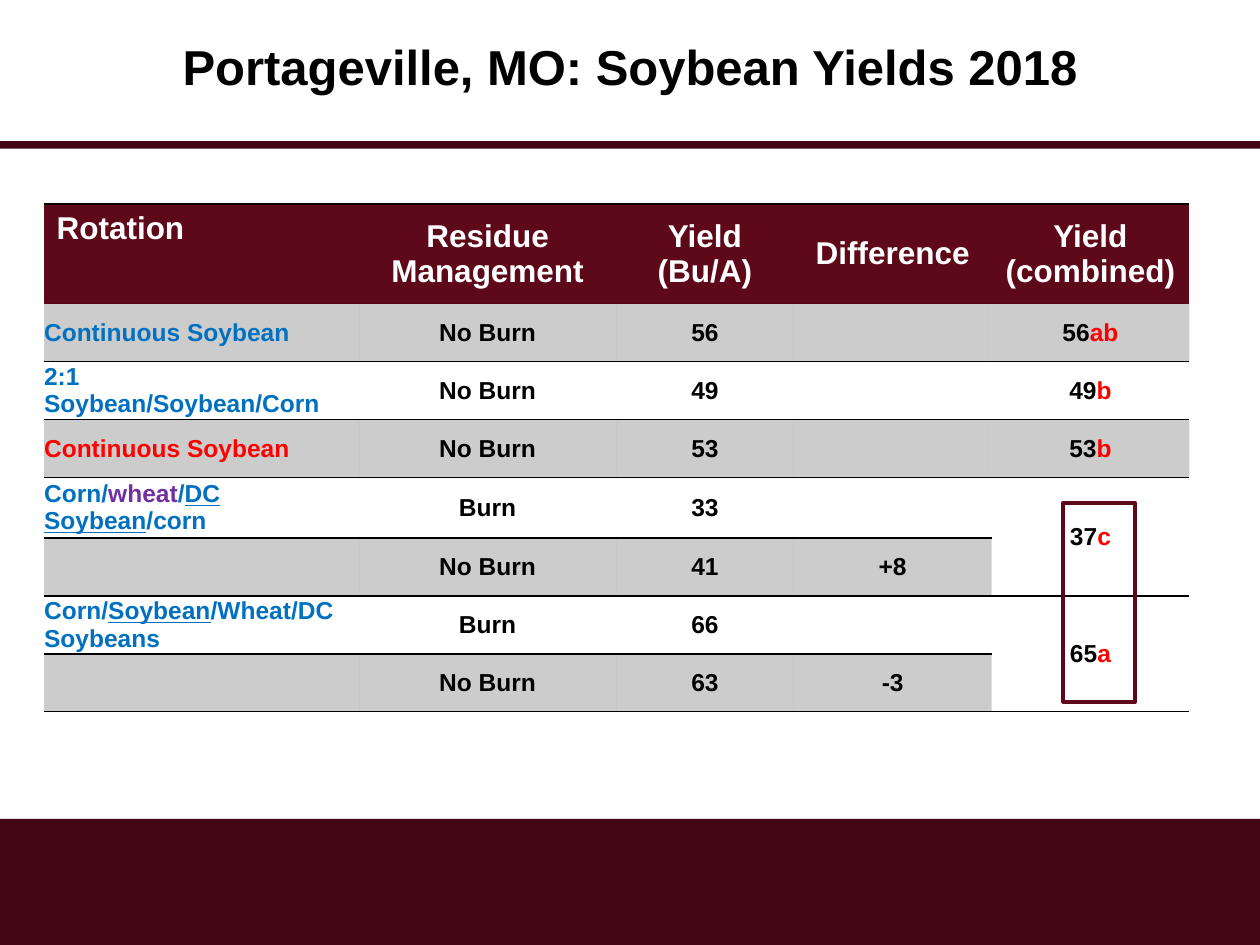
from dataclasses import dataclass

from lxml import etree
from pptx import Presentation
from pptx.dml.color import RGBColor
from pptx.enum.shapes import MSO_SHAPE
from pptx.enum.text import MSO_ANCHOR, MSO_AUTO_SIZE, PP_ALIGN
from pptx.oxml.ns import qn
from pptx.util import Inches, Pt

RECTANGLE = MSO_SHAPE.RECTANGLE
TOP, MIDDLE = MSO_ANCHOR.TOP, MSO_ANCHOR.MIDDLE
LEFT, CENTER = PP_ALIGN.LEFT, PP_ALIGN.CENTER
NO_AUTOFIT = MSO_AUTO_SIZE.NONE
TITLE_ONLY = 5


@dataclass(frozen=True)
class Theme:
    font: str = "Arial"
    title_size: int = 28
    header_size: int = 18
    body_size: int = 14
    black: str = "000000"
    white: str = "FFFFFF"
    band: str = "410611"
    maroon: str = "5E091A"
    blue: str = "0070C0"
    purple: str = "7030A0"
    red: str = "FF0000"
    shade_alpha: int = 20


THEME = Theme()


class SlideBuilder:
    def __init__(self, presentation, theme):
        self.theme = theme
        self.slide = presentation.slides.add_slide(presentation.slide_layouts[TITLE_ONLY])

    def style_run(self, run, size, color, underline=False):
        font = run.font
        font.name, font.size, font.bold = self.theme.font, Pt(size), True
        font.color.rgb = RGBColor.from_string(color)
        if underline:
            font.underline = True

    def title(self, text, left, top, width, height):
        shape = self.slide.shapes.title
        shape.left, shape.top = Inches(left), Inches(top)
        shape.width, shape.height = Inches(width), Inches(height)
        text_frame = shape.text_frame
        text_frame.text = text
        text_frame.auto_size = NO_AUTOFIT
        text_frame.vertical_anchor = MIDDLE
        paragraph = text_frame.paragraphs[0]
        paragraph.alignment, paragraph.line_spacing = CENTER, 0.9
        self.style_run(paragraph.runs[0], self.theme.title_size, self.theme.black)

    def rectangle(self, left, top, width, height, fill=None, line=None):
        shape = self.slide.shapes.add_shape(
            RECTANGLE, Inches(left), Inches(top), Inches(width), Inches(height))
        shape.shadow.inherit = False
        if fill:
            shape.fill.solid()
            shape.fill.fore_color.rgb = RGBColor.from_string(fill)
        else:
            shape.fill.background()
        if line:
            shape.line.color.rgb = RGBColor.from_string(line)
            shape.line.width = Pt(2.25)
        else:
            shape.line.fill.background()

    def table(self, left, top, widths, heights):
        frame = self.slide.shapes.add_table(
            len(heights), len(widths), Inches(left), Inches(top),
            Inches(sum(widths)), Inches(sum(heights)))
        table = frame.table
        for column, width in zip(table.columns, widths):
            column.width = Inches(width)
        for row, height in zip(table.rows, heights):
            row.height = Inches(height)
        return table

    def cell_borders(self, cell, ruled_sides):
        properties = cell._tc.get_or_add_tcPr()
        for side in "LRTB":
            line = etree.SubElement(properties, qn(f"a:ln{side}"), w=str(Pt(1)))
            if side in ruled_sides:
                fill = etree.SubElement(line, qn("a:solidFill"))
                etree.SubElement(fill, qn("a:srgbClr"), val=self.theme.black)
            else:
                etree.SubElement(line, qn("a:noFill"))

    def cell_fill(self, cell, color=None, alpha=None):
        if color is None:
            cell.fill.background()
            return
        cell.fill.solid()
        cell.fill.fore_color.rgb = RGBColor.from_string(color)
        if alpha:
            element = cell._tc.tcPr.find(qn("a:solidFill"))[0]
            etree.SubElement(element, qn("a:alpha"), val=str(alpha * 1000))

    def header_cell(self, cell, text, alignment, anchor):
        self.cell_borders(cell, "T")
        self.cell_fill(cell, self.theme.maroon)
        cell.vertical_anchor = anchor
        cell.text_frame.text = text
        for paragraph in cell.text_frame.paragraphs:
            paragraph.alignment = alignment
            self.style_run(paragraph.runs[0], self.theme.header_size, self.theme.white)

    def body_cell(self, cell, pieces, alignment, ruled_sides, shaded):
        self.cell_borders(cell, ruled_sides)
        if shaded:
            self.cell_fill(cell, self.theme.black, self.theme.shade_alpha)
        else:
            self.cell_fill(cell)
        cell.margin_left = cell.margin_right = cell.margin_top = cell.margin_bottom = 0
        cell.vertical_anchor = MIDDLE
        paragraph = cell.text_frame.paragraphs[0]
        paragraph.font.size = Pt(self.theme.body_size)
        paragraph.alignment = alignment
        for text, *style in pieces:
            run = paragraph.add_run()
            run.text = text
            self.style_run(run, self.theme.body_size, *style)


HEADERS = ["Rotation", "Residue\u0020Management", "Yield\n(Bu/A)", "Difference", "Yield\n(combined)"]
BLUE, PURPLE, RED = THEME.blue, THEME.purple, THEME.red

# Rotation pieces, residue, yield, difference, combined yield and its letter group
ROWS = [
    ([("Continuous Soybean", BLUE)], "No Burn", "56", "", ("56", "ab")),
    ([("2:1 Soybean/Soybean/Corn", BLUE)], "No Burn", "49", "", ("49", "b")),
    ([("Continuous Soybean", RED)], "No Burn", "53", "", ("53", "b")),
    ([("Corn/", BLUE), ("wheat", PURPLE), ("/", BLUE), ("DC Soybean", BLUE, True),
      ("/corn", BLUE)], "Burn", "33", "", ("37", "c")),
    ([], "No Burn", "41", "+8", None),
    ([("Corn/", BLUE), ("Soybean", BLUE, True), ("/Wheat/DC Soybeans", BLUE)],
     "Burn", "66", "", ("65", "a")),
    ([], "No Burn", "63", "-3", None),
]


def fill_yield_table(builder, table):
    for column, text in enumerate(HEADERS):
        alignment, anchor = (CENTER, MIDDLE) if column else (LEFT, TOP)
        builder.header_cell(table.cell(0, column), text, alignment, anchor)

    last = len(HEADERS) - 1
    for row, (rotation, *values, combined) in enumerate(ROWS, start=1):
        shaded = row % 2 == 1
        ruled_sides = "B" if row == 1 else "TB"
        builder.body_cell(table.cell(row, 0), rotation, LEFT, ruled_sides, shaded)
        for column, text in enumerate(values, start=1):
            pieces = [(text, THEME.black)] if text else []
            builder.body_cell(table.cell(row, column), pieces, CENTER, ruled_sides, shaded)

        # A row without a combined yield shares the cell above
        cell = table.cell(row, last)
        if combined:
            number, group = combined
            pieces = [(number, THEME.black), (group, RED)]
            builder.body_cell(cell, pieces, CENTER, ruled_sides, shaded and row <= 3)
        else:
            builder.body_cell(cell, [], CENTER, "B", False)
            table.cell(row - 1, last).merge(cell)


def main():
    presentation = Presentation()
    presentation.slide_width, presentation.slide_height = Inches(10), Inches(7.5)
    builder = SlideBuilder(presentation, THEME)

    # Footer band, title and rule
    builder.rectangle(0, 6.5, 10, 1, fill=THEME.band)
    builder.title("Portageville, MO: Soybean Yields 2018", 0, 0, 10, 1.11)
    builder.rectangle(0, 1.12, 10, 0.06, fill=THEME.band)

    # Yield table
    heights = [0.79] + [0.46] * 3 + [0.48] + [0.46] * 3
    table = builder.table(0.35, 1.62, [2.5, 2.04, 1.41, 1.57, 1.57], heights)
    fill_yield_table(builder, table)

    # Frame around the combined double-crop yields
    builder.rectangle(8.44, 3.99, 0.57, 1.58, line=THEME.maroon)

    presentation.save("out.pptx")


if __name__ == "__main__":
    main()
